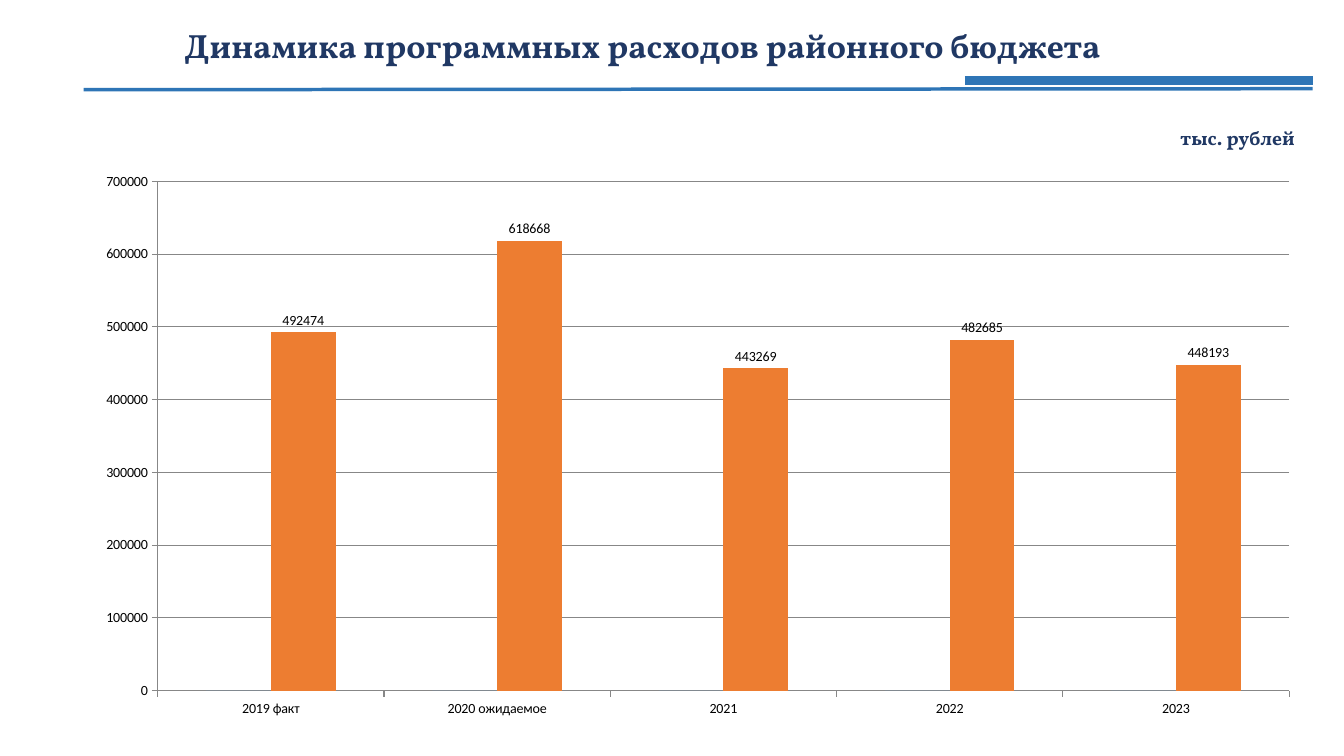
import pptx
import pptx.chart.data
import pptx.dml.color
import pptx.enum.chart
import pptx.enum.shapes
import pptx.enum.text
import pptx.oxml
import pptx.util

Inches = pptx.util.Inches
Pt = pptx.util.Pt
RGBColor = pptx.dml.color.RGBColor
MSO_ANCHOR = pptx.enum.text.MSO_ANCHOR
PP_ALIGN = pptx.enum.text.PP_ALIGN

NAVY = RGBColor(0x20, 0x38, 0x64)
RULE_BLUE = RGBColor(0x2E, 0x75, 0xB6)
SERIES_BLUE = RGBColor(0x5B, 0x9B, 0xD5)
SERIES_ORANGE = RGBColor(0xED, 0x7D, 0x31)
GRID_GREY = RGBColor(0x87, 0x87, 0x87)
BLACK = RGBColor(0, 0, 0)

deck = pptx.Presentation()
deck.slide_width = Inches(13.33)
deck.slide_height = Inches(7.5)
slide = deck.slides.add_slide(deck.slide_layouts[6])

captions = [
    ("Динамика программных расходов районного бюджета", (0.37, 0.03, 12, 0.88), 24,
     {"word_wrap": True, "vertical_anchor": MSO_ANCHOR.MIDDLE},
     {"alignment": PP_ALIGN.CENTER, "line_spacing": 0.9}),
    ("тыс. рублей", (11.61, 1.2, 1.37, 0.34), 14,
     {"word_wrap": False, "auto_size": pptx.enum.text.MSO_AUTO_SIZE.SHAPE_TO_FIT_TEXT},
     {"alignment": PP_ALIGN.LEFT}),
]
for wording, place, size, frame_format, paragraph_format in captions:
    frame = slide.shapes.add_textbox(*map(Inches, place)).text_frame
    paragraph = frame.paragraphs[0]
    caption = paragraph.add_run()
    caption.text = wording
    caption.font.color.rgb = NAVY
    font_format = {"name": "Vollkorn", "size": Pt(size), "bold": True}
    for target, values in ((frame, frame_format), (paragraph, paragraph_format),
                           (caption.font, font_format)):
        for attribute, value in values.items():
            setattr(target, attribute, value)

for ends, weight in (((0.83, 0.89, 13.02, 0.88), 2.5), ((9.57, 0.8, 13.02, 0.8), 6)):
    rule = slide.shapes.add_connector(
        pptx.enum.shapes.MSO_CONNECTOR.STRAIGHT, *map(Inches, ends))
    rule.line.color.rgb = RULE_BLUE
    rule.line.width = Pt(weight)
    rule.element.spPr.append(pptx.oxml.parse_xml(
        '<a:effectLst xmlns:a="http://schemas.openxmlformats.org/drawingml/2006/main"/>'))

spending = pptx.chart.data.CategoryChartData()
spending.categories = ["2019 факт", "2020 ожидаемое", "2021", "2022", "2023"]
spending.add_series("Series 1", [0] * 5)
spending.add_series("Series 2", [492474, 618668, 443269, 482685, 448193])
chart = slide.shapes.add_chart(
    pptx.enum.chart.XL_CHART_TYPE.COLUMN_CLUSTERED,
    *map(Inches, (0.81, 1.61, 12.22, 5.61)), spending).chart
chart.has_legend = False
chart.has_title = False
chart.font.name = "Calibri"
chart.font.size = Pt(10)
chart.font.color.rgb = BLACK

columns = chart.plots[0]
for attribute, value in {"gap_width": 150, "overlap": 0, "vary_by_categories": False}.items():
    setattr(columns, attribute, value)
for series, color in zip(columns.series, (SERIES_BLUE, SERIES_ORANGE)):
    series.format.fill.solid()
    series.format.fill.fore_color.rgb = color

amounts = columns.series[1].data_labels
amounts.show_value = True
amounts.position = pptx.enum.chart.XL_LABEL_POSITION.OUTSIDE_END

for axis in (chart.category_axis, chart.value_axis):
    axis.major_tick_mark = pptx.enum.chart.XL_TICK_MARK.OUTSIDE
    axis.minor_tick_mark = pptx.enum.chart.XL_TICK_MARK.NONE
    axis.format.line.color.rgb = GRID_GREY
    axis.format.line.width = Pt(0.75)

scale = {"minimum_scale": 0, "maximum_scale": 700000, "major_unit": 100000,
         "has_major_gridlines": True}
for attribute, value in scale.items():
    setattr(chart.value_axis, attribute, value)
gridlines = chart.value_axis.major_gridlines.format.line
gridlines.color.rgb = GRID_GREY
gridlines.width = Pt(0.75)

deck.save("out.pptx")
